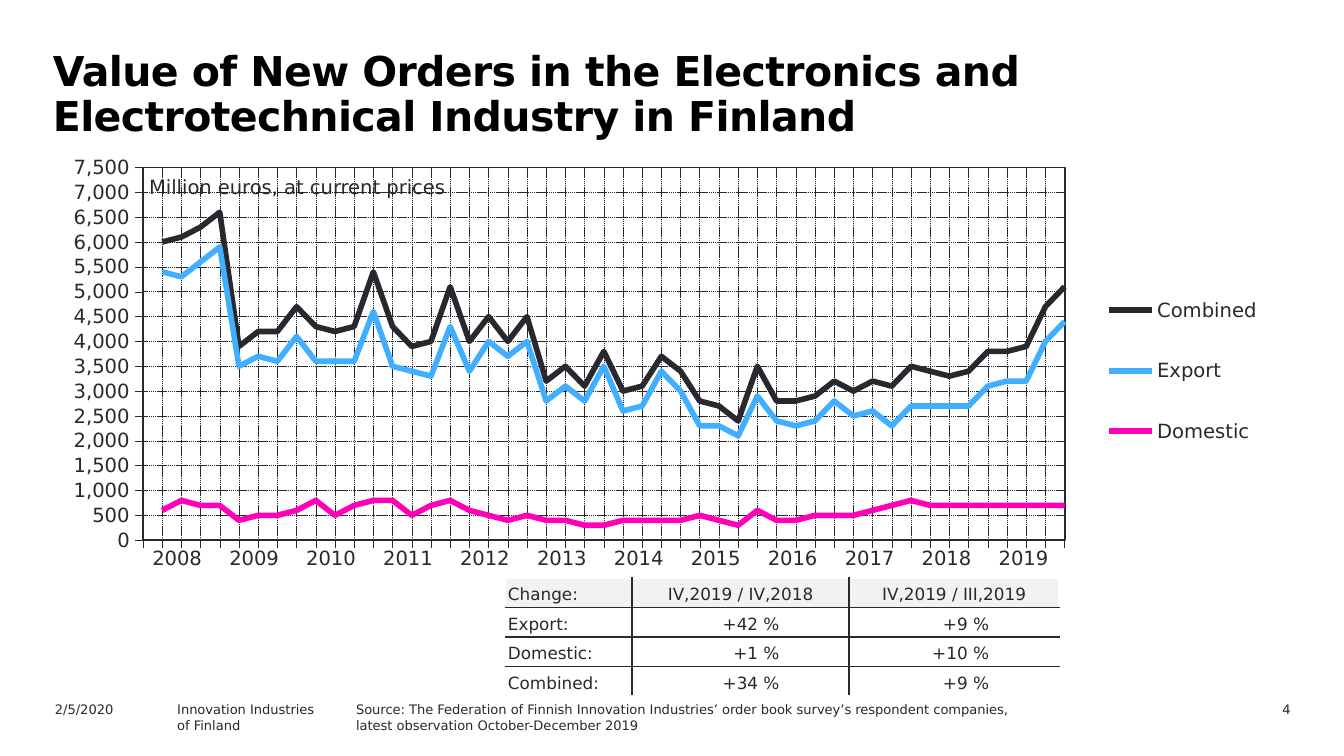
"""Build a slide on new orders in the Finnish electronics and electrotechnical industry."""
import pptx
import pptx.chart.data
import pptx.dml.color
import pptx.enum.chart
import pptx.enum.dml
import pptx.enum.text
import pptx.oxml
import pptx.oxml.ns
import pptx.util

Cm = pptx.util.Cm
Pt = pptx.util.Pt
qn = pptx.oxml.ns.qn
ALIGN = pptx.enum.text.PP_ALIGN
ANCHOR = pptx.enum.text.MSO_ANCHOR
TICK = pptx.enum.chart.XL_TICK_MARK

INK = pptx.dml.color.RGBColor(0x29, 0x28, 0x2E)
BLACK = pptx.dml.color.RGBColor(0, 0, 0)
WHITE = pptx.dml.color.RGBColor(0xFF, 0xFF, 0xFF)
HEADER_GRAY = pptx.dml.color.RGBColor(0xF2, 0xF2, 0xF2)
BLUE = pptx.dml.color.RGBColor(0x40, 0xAF, 0xFF)
PINK = pptx.dml.color.RGBColor(0xFF, 0x00, 0xB8)
FONT = "DejaVu Sans"
PLAIN_TABLE_STYLE = "{2D5ABB26-0587-4C30-8999-92F81FD0307C}"

TITLE = "Value of New Orders in the Electronics and Electrotechnical Industry in Finland"
UNIT = "Million euros, at current prices"
YEARS = [str(year) for year in range(2008, 2020)]
SERIES = [
    ("Combined", INK, [
        None, 6000, 6100, 6300, 6600, 3900, 4200, 4200, 4700, 4300, 4200, 4300, 5400,
        4300, 3900, 4000, 5100, 4000, 4500, 4000, 4500, 3200, 3500, 3100, 3800,
        3000, 3100, 3700, 3400, 2800, 2700, 2400, 3500, 2800, 2800, 2900, 3200,
        3000, 3200, 3100, 3500, 3400, 3300, 3400, 3800, 3800, 3900, 4700, 5100]),
    ("Export", BLUE, [
        None, 5400, 5300, 5600, 5900, 3500, 3700, 3600, 4100, 3600, 3600, 3600, 4600,
        3500, 3400, 3300, 4300, 3400, 4000, 3700, 4000, 2800, 3100, 2800, 3500,
        2600, 2700, 3400, 3000, 2300, 2300, 2100, 2900, 2400, 2300, 2400, 2800,
        2500, 2600, 2300, 2700, 2700, 2700, 2700, 3100, 3200, 3200, 4000, 4400]),
    ("Domestic", PINK, [
        None, 600, 800, 700, 700, 400, 500, 500, 600, 800, 500, 700, 800,
        800, 500, 700, 800, 600, 500, 400, 500, 400, 400, 300, 300,
        400, 400, 400, 400, 500, 400, 300, 600, 400, 400, 500, 500,
        500, 600, 700, 800, 700, 700, 700, 700, 700, 700, 700, 700]),
]
CHANGES = [
    ("Change:", "IV,2019 / IV,2018", "IV,2019 / III,2019"),
    ("Export:", "+42 %", "+9 %"),
    ("Domestic:", "+1 %", "+10 %"),
    ("Combined:", "+34 %", "+9 %"),
]
CHANGE_WIDTHS = (2.39, 4.11, 3.96)
FOOTER_TOP, FOOTER_HEIGHT = 13.13, 0.46
FOOTERS = [
    ("4", 22.25, 2.39, ALIGN.RIGHT),
    ("Source: The Federation of Finnish Innovation Industries’ order book survey’s "
     "respondent companies, latest observation October-December 2019", 6.48, 12.88, ALIGN.LEFT),
    ("Innovation Industries\nof Finland", 3.1, 4.57, ALIGN.LEFT),
    ("2/5/2020", 0.79, 2.54, ALIGN.LEFT),
]


def write_text(box, text, *, size, color=INK, bold=False, align=ALIGN.LEFT, anchor=ANCHOR.TOP,
               margins=(0.25, 0.13, 0.25, 0.13), line_spacing=None, tracking=None):
    """Fill a text frame or table cell with formatted text."""
    frame = getattr(box, "text_frame", box)
    frame.text = text
    box.vertical_anchor = anchor
    box.margin_left, box.margin_top, box.margin_right, box.margin_bottom = map(Cm, margins)
    for paragraph in frame.paragraphs:
        paragraph.alignment = align
        paragraph.space_before = Pt(0)
        paragraph.line_spacing = line_spacing
        for run in paragraph.runs:
            style_font(run.font, size, color, bold)
            if tracking:
                run.font._element.set("spc", str(round(tracking * 100)))


def style_font(font, size, color=INK, bold=False):
    """Set typeface, size, colour and weight."""
    font.name, font.size, font.bold = FONT, Pt(size), bold
    font.color.rgb = color


def style_line(line, width, color=INK, dash=None):
    """Set colour, width and dash of a line."""
    line.color.rgb = color
    line.width = Pt(width)
    if dash:
        line.dash_style = dash


def add_text(slide, text, left, top, width, height, *, wrap=True, **text_format):
    """Add a text box."""
    frame = slide.shapes.add_textbox(Cm(left), Cm(top), Cm(width), Cm(height)).text_frame
    frame.word_wrap = wrap
    write_text(frame, text, **text_format)


def add_plain_table(slide, rows, left, top, widths, row_height):
    """Add an unstyled table and return it."""
    shape = slide.shapes.add_table(len(rows), len(widths), Cm(left), Cm(top),
                                   Cm(sum(widths)), Cm(row_height * len(rows)))
    table = shape.table
    table.first_row = table.horz_banding = False
    table._tbl.tblPr.find(qn("a:tableStyleId")).text = PLAIN_TABLE_STYLE
    for column, width in zip(table.columns, widths):
        column.width = Cm(width)
    for row in table.rows:
        row.height = Cm(row_height)
    return table


def set_borders(cell, colors):
    """Draw the left, right, top and bottom borders of a cell."""
    properties = cell._tc.get_or_add_tcPr()
    for index, (side, color) in enumerate(zip("LRTB", colors)):
        properties.insert(index, pptx.oxml.parse_xml(
            f'<a:ln{side} {pptx.oxml.ns.nsdecls("a")} w="12700"><a:solidFill>'
            f'<a:srgbClr val="{color}"/></a:solidFill></a:ln{side}>'))


def chart_layout(x, y, width, height, inner=False):
    """Return a manual chart layout element."""
    target = '<c:layoutTarget val="inner"/>' if inner else ""
    sizes = "".join(f'<c:{name} val="{value}"/>' for name, value in
                    zip("xywh", (x, y, width, height)))
    return pptx.oxml.parse_xml(
        f'<c:layout {pptx.oxml.ns.nsdecls("c")}><c:manualLayout>{target}'
        f'<c:xMode val="edge"/><c:yMode val="edge"/>{sizes}</c:manualLayout></c:layout>')


def place_layout(parent, index, layout):
    """Replace the layout of a chart part."""
    for old in parent.findall(qn("c:layout")):
        parent.remove(old)
    parent.insert(index, layout)


def add_orders_chart(slide):
    """Add the line chart of new orders."""
    data = pptx.chart.data.CategoryChartData(number_format="#,##0")
    data.categories = [str(number) for number in range(1, len(SERIES[0][2]) + 1)]
    for name, _, values in SERIES:
        data.add_series(name, values)
    chart = slide.shapes.add_chart(pptx.enum.chart.XL_CHART_TYPE.LINE, Cm(0.79), Cm(2.82),
                                   Cm(23.32), Cm(8.46), data).chart
    chart.has_title = False
    style_font(chart.font, 10.5)
    chart.plots[0].vary_by_categories = False
    for series, (_, color, _) in zip(chart.plots[0].series, SERIES):
        series.smooth = False
        series.marker.style = pptx.enum.chart.XL_MARKER_STYLE.NONE
        style_line(series.format.line, 3, color)

    for axis in (chart.category_axis, chart.value_axis):
        axis.has_major_gridlines = True
        axis.major_tick_mark, axis.minor_tick_mark = TICK.OUTSIDE, TICK.NONE
        style_line(axis.format.line, 0.22)
        style_line(axis.major_gridlines.format.line, 0.25,
                   dash=pptx.enum.dml.MSO_LINE.SQUARE_DOT)
    chart.category_axis.tick_label_position = pptx.enum.chart.XL_TICK_LABEL_POSITION.NONE
    value_axis = chart.value_axis
    value_axis.minimum_scale, value_axis.maximum_scale, value_axis.major_unit = 0, 7500, 500
    value_axis.tick_labels.number_format = "#,##0"
    value_axis.tick_labels.number_format_is_linked = False
    style_font(value_axis.tick_labels.font, 10.5)
    element = value_axis._element
    for old in element.findall(qn("c:crossBetween")):
        element.remove(old)
    element.find(qn("c:crosses")).addnext(pptx.oxml.parse_xml(
        f'<c:crossBetween {pptx.oxml.ns.nsdecls("c")} val="midCat"/>'))

    chart.has_legend = True
    chart.legend.position = pptx.enum.chart.XL_LEGEND_POSITION.RIGHT
    chart.legend.include_in_layout = False
    style_font(chart.legend.font, 10.5)
    place_layout(chart.legend._element, 1, chart_layout(0.85, 0.25, 0.15, 0.49))
    plot_area = chart._chartSpace.chart.plotArea
    place_layout(plot_area, 0, chart_layout(0.082, 0.041, 0.747, 0.833, inner=True))
    plot_area.append(pptx.oxml.parse_xml(
        f'<c:spPr {pptx.oxml.ns.nsdecls("c", "a")}><a:noFill/><a:ln w="12700"><a:solidFill>'
        f'<a:srgbClr val="{INK}"/></a:solidFill></a:ln></c:spPr>'))


def add_change_table(slide):
    """Add the table of quarterly and yearly changes."""
    table = add_plain_table(slide, CHANGES, 9.55, 10.92, CHANGE_WIDTHS, 0.56)
    last_row, last_column = len(CHANGES) - 1, len(CHANGE_WIDTHS) - 1
    for r, row in enumerate(CHANGES):
        for c, text in enumerate(row):
            cell = table.cell(r, c)
            figure = r > 0 and c > 0
            align = ALIGN.LEFT if c == 0 else ALIGN.RIGHT if figure else ALIGN.CENTER
            write_text(cell, text, size=9, align=align, anchor=ANCHOR.BOTTOM,
                       margins=(0.05, 0.05, 1.32 if figure else 0.05, 0.05))
            cell.fill.solid()
            cell.fill.fore_color.rgb = WHITE if r else HEADER_GRAY
            outer = (c == 0, c == last_column, r == 0, r == last_row)
            set_borders(cell, [WHITE if edge else INK for edge in outer])


def main():
    presentation = pptx.Presentation()
    presentation.slide_width, presentation.slide_height = Cm(25.4), Cm(14.29)
    slide = presentation.slides.add_slide(presentation.slide_layouts[5])
    title = slide.shapes.title
    title.left, title.top, title.width, title.height = map(Cm, (0.71, 0.79, 22.2, 2.03))
    title.text_frame.auto_size = pptx.enum.text.MSO_AUTO_SIZE.NONE
    write_text(title.text_frame, TITLE, size=22, color=BLACK, bold=True, line_spacing=0.9,
               tracking=-0.3, margins=(0.29, 0.18, 0.25, 0.13))
    add_orders_chart(slide)
    years = add_plain_table(slide, [YEARS], 2.62, 10.21, [17.45 / len(YEARS)] * len(YEARS), 0.79)
    for column, year in enumerate(YEARS):
        write_text(years.cell(0, column), year, size=10.5, align=ALIGN.CENTER)
    add_text(slide, UNIT, 2.59, 3.18, 6.2, 0.69, wrap=False, size=10.5,
             margins=(0.23, 0.13, 0.23, 0.13))
    add_change_table(slide)
    for text, left, width, align in FOOTERS:
        add_text(slide, text, left, FOOTER_TOP, width, FOOTER_HEIGHT, size=7, align=align)
    presentation.save("out.pptx")


if __name__ == "__main__":
    main()
